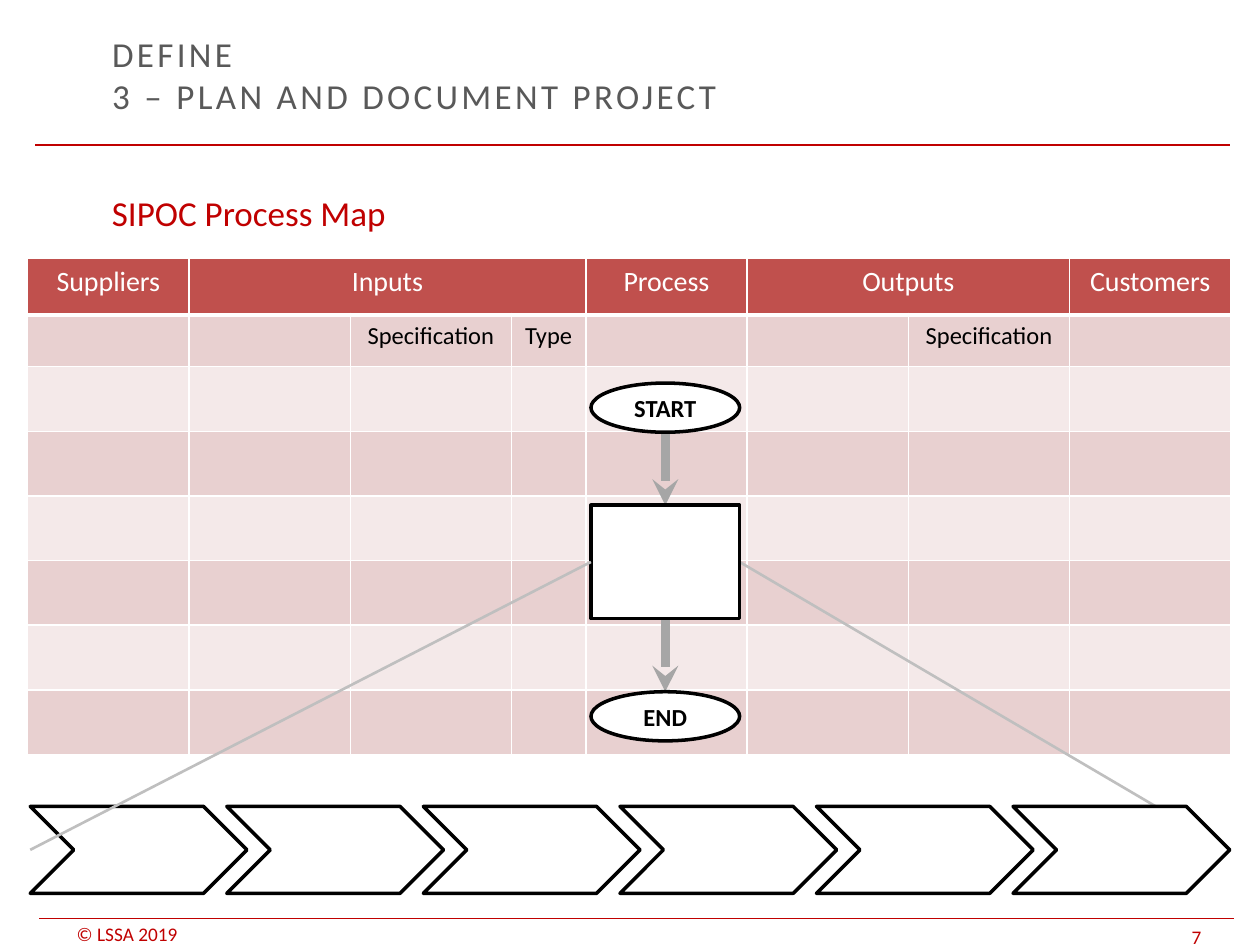
from collections import namedtuple
from dataclasses import dataclass

from lxml.etree import SubElement
from pptx import Presentation
from pptx.dml.color import RGBColor
from pptx.enum.shapes import MSO_CONNECTOR as Connector, MSO_SHAPE as Shape
from pptx.enum.text import MSO_ANCHOR as Anchor, PP_ALIGN as Align
from pptx.oxml.ns import qn
from pptx.util import Inches, Pt

Box = namedtuple("Box", "left top width height")


@dataclass(frozen=True)
class Theme:
    font: str = "Calibri"
    accent: str = "C00000"
    title: str = "595959"
    header: str = "C0504D"
    bands: tuple = ("E8D0D0", "F4E9E9")
    white: str = "FFFFFF"
    black: str = "000000"
    arrow: str = "A6A6A6"
    zoom: str = "BFBFBF"
    heading_size: int = 20
    header_size: int = 16
    label_size: int = 14
    footer_size: int = 11


THEME = Theme()
HEADERS = [("Suppliers", 1), ("Inputs", 3), ("Process", 1), ("Outputs", 2), ("Customers", 1)]
SUBHEADERS = {2: "Specification", 3: "Type", 6: "Specification"}
COLUMN_WIDTHS = [1.28] * 3 + [0.59] + [1.28] * 4
HEADER_HEIGHTS = [0.45, 0.41]
BODY_ROWS = 6


def rgb(value):
    return RGBColor.from_string(value)


def inches(*lengths):
    return [Inches(length) for length in lengths]


def apply(target, **values):
    for name, value in values.items():
        setattr(target, name, value)


def write(frame, text, size, color, align=Align.LEFT, bold=False):
    frame.text = text
    paragraph = frame.paragraphs[0]
    paragraph.alignment = align
    for run in paragraph.runs:
        apply(run.font, name=THEME.font, size=Pt(size), bold=bold)
        run.font.color.rgb = rgb(color)


def add_label(slide, box, text, size, **frame_format):
    label = slide.shapes.add_textbox(*inches(*box)).text_frame
    apply(label, **frame_format)
    write(label, text, size, THEME.accent)


def add_line(slide, start, end, color, width, arrowhead=None):
    line = slide.shapes.add_connector(Connector.STRAIGHT, *inches(*start, *end))
    line.line.color.rgb = rgb(color)
    line.line.width = Pt(width)
    if arrowhead:
        SubElement(line.line._get_or_add_ln(), qn("a:tailEnd"), type=arrowhead)
    SubElement(line._element.spPr, qn("a:effectLst"))
    return line


def add_outlined(shapes, kind, box, text=""):
    step = shapes.add_shape(kind, *inches(*box))
    step.shadow.inherit = False
    step.fill.solid()
    step.fill.fore_color.rgb = rgb(THEME.white)
    step.line.color.rgb = rgb(THEME.black)
    step.line.width = Pt(2)
    if text:
        step.text_frame.vertical_anchor = Anchor.MIDDLE
        write(step.text_frame, text, THEME.label_size, THEME.black, Align.CENTER, True)
    return step


def add_heading(slide, box):
    title = slide.shapes.title
    apply(title, **dict(zip(Box._fields, inches(*box))))
    apply(title.text_frame, word_wrap=True, vertical_anchor=Anchor.MIDDLE)
    write(title.text_frame, "DEFINE\v3 – PLAN AND DOCUMENT PROJECT",
          THEME.heading_size, THEME.title)
    for run in title.text_frame.paragraphs[0].runs:
        run._r.get_or_add_rPr().set("spc", "190")
    add_line(slide, (0.28, 1.15), (9.76, 1.15), THEME.accent, 0.75)


def add_footer(slide, box):
    add_line(slide, (box.left, box.top), (box.left + box.width, box.top), THEME.accent, 0.75)
    footer_format = dict(word_wrap=False, vertical_anchor=Anchor.BOTTOM,
                         margin_top=0, margin_bottom=0)
    add_label(slide, Box(box.left + 0.2, box.top + 0.03, 1.42, 0.18), "© LSSA 2019",
              THEME.footer_size, **footer_format)
    add_label(slide, Box(box.left + 9.05, box.top + 0.02, 0.64, 0.22), "7",
              THEME.footer_size, **footer_format)


def format_cell(cell, fill, bottom_width):
    for side, width in dict(lnL=1, lnR=1, lnT=1, lnB=bottom_width).items():
        border = SubElement(cell._tc.get_or_add_tcPr(), qn(f"a:{side}"), w=str(Pt(width)))
        SubElement(SubElement(border, qn("a:solidFill")), qn("a:srgbClr"), val=THEME.white)
    cell.fill.solid()
    cell.fill.fore_color.rgb = rgb(fill)


def add_sipoc_table(slide, box):
    body_height = (box.height - sum(HEADER_HEIGHTS)) / BODY_ROWS
    heights = HEADER_HEIGHTS + [body_height] * BODY_ROWS
    table = slide.shapes.add_table(len(heights), len(COLUMN_WIDTHS), *inches(*box)).table
    for column, width in zip(table.columns, COLUMN_WIDTHS):
        column.width = Inches(width)
    for index, (row, height) in enumerate(zip(table.rows, heights)):
        row.height = Inches(height)
        fill = THEME.bands[(index + 1) % 2] if index else THEME.header
        for cell in row.cells:
            format_cell(cell, fill, 1 if index else 3)
    first = 0
    for text, span in HEADERS:
        cell = table.cell(0, first)
        if span > 1:
            cell.merge(table.cell(0, first + span - 1))
        write(cell.text_frame, text, THEME.header_size, THEME.white, Align.CENTER)
        first += span
    for column, text in SUBHEADERS.items():
        write(table.cell(1, column).text_frame, text, THEME.label_size, THEME.black, Align.CENTER)


def add_chevrons(slide, box, count=6, pitch=1.56):
    group = slide.shapes.add_group_shape()
    width = box.width - (count - 1) * pitch
    for index in range(count):
        add_outlined(group.shapes, Shape.CHEVRON,
                     Box(box.left + index * pitch, box.top, width, box.height))


def add_process_flow(slide, box, oval_height=0.39, gap=0.58):
    center = box.left + box.width / 2
    start_bottom = box.top + oval_height
    end_top = box.top + box.height - oval_height
    task_top, task_bottom = start_bottom + gap, end_top - gap
    arrows = [add_line(slide, (center, top), (center, top + gap), THEME.arrow, 5, "stealth")
              for top in (start_bottom, task_bottom)]
    add_outlined(slide.shapes, Shape.OVAL,
                 Box(box.left, box.top, box.width, oval_height), "START")
    task = add_outlined(slide.shapes, Shape.RECTANGLE,
                        Box(box.left, task_top, box.width, task_bottom - task_top))
    add_outlined(slide.shapes, Shape.OVAL,
                 Box(box.left, end_top, box.width, oval_height), "END")
    arrows[0].end_connect(task, 0)
    arrows[1].begin_connect(task, 2)
    return task


def add_zoomed_process(slide, flow, chain):
    task_middle = flow.top + flow.height / 2
    chain_middle = chain.top + chain.height / 2
    right_zoom = add_line(slide, (flow.left + flow.width, task_middle),
                          (chain.left + chain.width, chain_middle), THEME.zoom, 1.5)
    add_chevrons(slide, chain)
    task = add_process_flow(slide, flow)
    left_zoom = add_line(slide, (flow.left, task_middle),
                         (chain.left, chain_middle), THEME.zoom, 1.5)
    right_zoom.begin_connect(task, 3)
    left_zoom.begin_connect(task, 1)


def main():
    deck = Presentation()
    apply(deck, slide_width=Inches(10), slide_height=Inches(7.5))
    slide = deck.slides.add_slide(deck.slide_layouts[5])
    add_footer(slide, Box(0.31, 7.29, 9.48, 0.21))
    add_heading(slide, Box(0.79, 0.26, 7.09, 0.66))
    add_label(slide, Box(0.79, 1.47, 8.66, 0.52), "SIPOC Process Map",
              THEME.heading_size, word_wrap=True)
    add_sipoc_table(slide, Box(0.22, 2.05, 9.55, 3.94))
    add_zoomed_process(slide, flow=Box(4.69, 3.04, 1.18, 2.84),
                       chain=Box(0.24, 6.4, 9.52, 0.69))
    deck.save("out.pptx")


if __name__ == "__main__":
    main()
